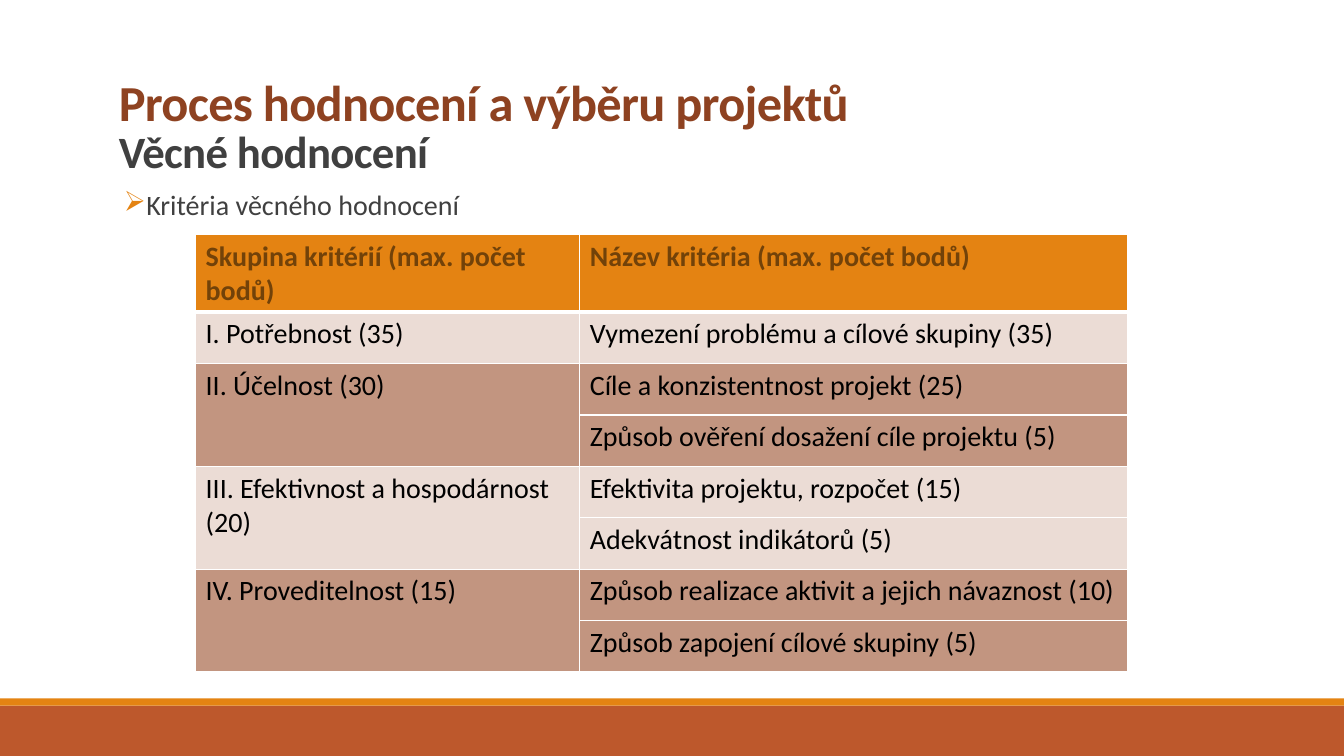
import pptx
import pptx.dml.color
import pptx.enum.shapes
import pptx.enum.text
import pptx.oxml
import pptx.oxml.ns
import pptx.util
from pptx.util import Inches, Pt

FONT = "Calibri"
COLORS = {
    "rust": "BD582C", "orange": "E48312", "title": "8E4221", "text": "404040",
    "header": "724209", "black": "000000", "white": "FFFFFF",
    "light": "EBDCD5", "dark": "C29580",
}
HEADINGS = ["Skupina kritérií (max. počet bodů)", "Název kritéria (max. počet bodů)"]
GROUPS = [
    ("I. Potřebnost (35)", ["Vymezení problému a cílové skupiny (35)"]),
    ("II. Účelnost (30)", ["Cíle a konzistentnost projekt (25)",
                           "Způsob ověření dosažení cíle projektu (5)"]),
    ("III. Efektivnost a hospodárnost (20)", ["Efektivita projektu, rozpočet (15)",
                                              "Adekvátnost indikátorů (5)"]),
    ("IV. Proveditelnost (15)", ["Způsob realizace aktivit a jejich návaznost (10)",
                                 "Způsob zapojení cílové skupiny (5)"]),
]


def rgb(name):
    return pptx.dml.color.RGBColor.from_string(COLORS[name])


def add_xml(parent, tag, attrs, inner=""):
    ns = pptx.oxml.ns.nsdecls("a")
    parent.append(pptx.oxml.parse_xml(f"<a:{tag} {ns} {attrs}>{inner}</a:{tag}>"))


def solid(name):
    return f'<a:solidFill><a:srgbClr val="{COLORS[name]}"/></a:solidFill>'


def add_run(p, text, size, color, bold=False):
    r = p.add_run()
    r.text = text
    r.font.name = FONT
    r.font.size = Pt(size)
    r.font.bold = bold
    r.font.color.rgb = rgb(color)
    return r


def add_text_box(s, x, y, w, h):
    tf = s.shapes.add_textbox(Inches(x), Inches(y), Inches(w), Inches(h)).text_frame
    tf.word_wrap = True
    return tf


def add_footer(s, x, y, w, h):
    stripe = 0.07
    for top, height, color in [(y + stripe, h - stripe, "rust"), (y, stripe, "orange")]:
        sp = s.shapes.add_shape(pptx.enum.shapes.MSO_SHAPE.RECTANGLE,
                                Inches(x), Inches(top), Inches(w), Inches(height))
        sp.shadow.inherit = False
        sp.fill.solid()
        sp.fill.fore_color.rgb = rgb(color)
        sp.line.fill.background()


def add_title(s, x, y, w, h):
    tf = add_text_box(s, x, y, w, h)
    tf.vertical_anchor = pptx.enum.text.MSO_ANCHOR.BOTTOM
    p = tf.paragraphs[0]
    p.line_spacing = 0.85
    first = add_run(p, "Proces hodnocení a výběru projektů", 36, "title", True)
    p.add_line_break()
    second = add_run(p, "Věcné hodnocení", 32, "text", True)
    for r in (first, second):
        r.font._element.set("spc", "-50")


def add_bullet(s, x, y, w, h):
    tf = add_text_box(s, x, y, w, h)
    tf.margin_left = tf.margin_right = 0
    p = tf.paragraphs[0]
    p.line_spacing = 0.9
    p.space_before, p.space_after = Pt(12), Pt(2)
    pPr = p._p.get_or_add_pPr()
    pPr.set("marL", str(Inches(0.1)))
    pPr.set("indent", str(Inches(-0.1)))
    add_xml(pPr, "buClr", "", f'<a:srgbClr val="{COLORS["orange"]}"/>')
    add_xml(pPr, "buChar", 'char="➢"')
    add_run(p, "Kritéria věcného hodnocení", 20, "text")


def style_cell(cell, fill, top=1, bottom=1):
    tcPr = cell._tc.get_or_add_tcPr()
    for side, width in [("L", 1), ("R", 1), ("T", top), ("B", bottom)]:
        add_xml(tcPr, f"ln{side}", f'w="{Pt(width)}"', solid("white"))
    cell.fill.solid()
    cell.fill.fore_color.rgb = rgb(fill)


def add_criteria_table(s, x, y, w, h):
    row_h, group_w = 0.51, 3.81
    n_rows = 1 + sum(len(names) for _, names in GROUPS)
    table = s.shapes.add_table(n_rows, 2, Inches(x), Inches(y), Inches(w), Inches(h)).table
    table.columns[0].width = Inches(group_w)
    table.columns[1].width = Inches(w - group_w)
    for row in table.rows:
        row.height = Inches(row_h)
    table.rows[0].height = Inches(h - row_h * (n_rows - 1))

    # Header row
    for col, heading in enumerate(HEADINGS):
        cell = table.cell(0, col)
        style_cell(cell, "orange", bottom=3)
        add_run(cell.text_frame.paragraphs[0], heading, 20, "header", True)

    # Groups in alternating colours, each spanning its criteria
    row = 1
    for i, (group, names) in enumerate(GROUPS):
        fill = "dark" if i % 2 else "light"
        start = row
        for name in names:
            for col in range(2):
                style_cell(table.cell(row, col), fill, top=3 if row == 1 else 1)
            add_run(table.cell(row, 1).text_frame.paragraphs[0], name, 20, "black")
            row += 1
        if len(names) > 1:
            table.cell(start, 0).merge(table.cell(row - 1, 0))
        add_run(table.cell(start, 0).text_frame.paragraphs[0], group, 20, "black")


def main():
    prs = pptx.Presentation()
    prs.slide_width, prs.slide_height = Inches(13.33), Inches(7.5)
    s = prs.slides.add_slide(prs.slide_layouts[6])
    add_footer(s, 0, 6.93, 13.33, 0.57)
    add_title(s, 1.08, 0.59, 10.96, 1.22)
    add_bullet(s, 1.23, 1.85, 10.96, 0.73)
    add_criteria_table(s, 1.94, 2.33, 9.24, 4.33)
    prs.save("out.pptx")


if __name__ == "__main__":
    main()
